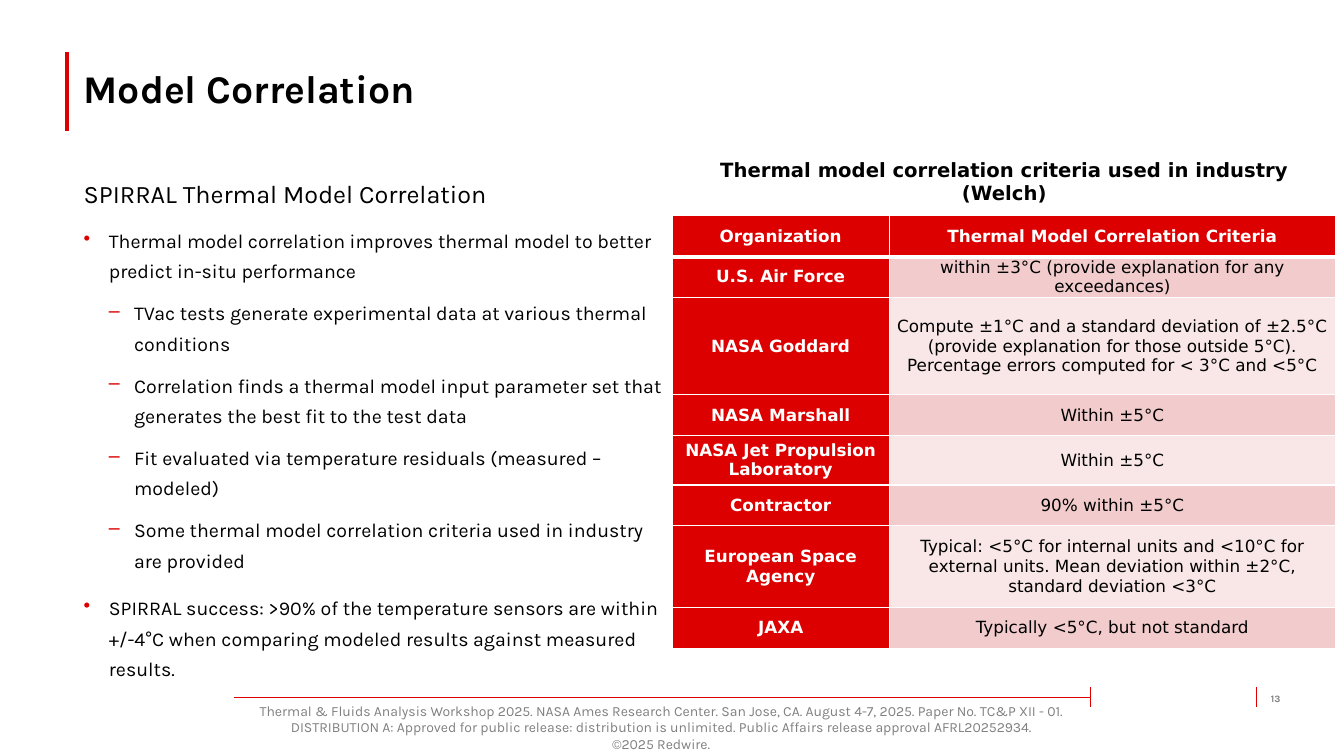
"""Build the Model Correlation slide with its criteria table."""
from dataclasses import dataclass

from lxml.etree import SubElement
from pptx import Presentation
from pptx.dml.color import RGBColor
from pptx.enum.shapes import MSO_CONNECTOR
from pptx.enum.text import MSO_ANCHOR, PP_ALIGN
from pptx.oxml import parse_xml
from pptx.oxml.ns import nsdecls, qn
from pptx.slide import Slide
from pptx.table import _Cell
from pptx.text.text import TextFrame, _Paragraph
from pptx.util import Cm, Pt

RED = RGBColor(0xDC, 0x00, 0x00)
ROSE = RGBColor(0xF2, 0xCC, 0xCC)
PALE_ROSE = RGBColor(0xF9, 0xE7, 0xE7)
WHITE = RGBColor(0xFF, 0xFF, 0xFF)
BLACK = RGBColor(0x00, 0x00, 0x00)
GRAY = RGBColor(0x80, 0x80, 0x80)
BODY_FONT = "Karla"
TABLE_FONT = "DejaVu Sans"


@dataclass(frozen=True)
class Style:
    size: float
    color: RGBColor = BLACK
    bold: bool = False
    font: str = BODY_FONT
    align: PP_ALIGN = PP_ALIGN.LEFT
    spacing: float = 1.0


@dataclass(frozen=True)
class Label:
    text: str
    box: tuple[float, float, float, float]
    style: Style
    anchor: MSO_ANCHOR = MSO_ANCHOR.TOP
    inset: tuple[float, float] = (0, 0)


@dataclass(frozen=True)
class Rule:
    start: tuple[float, float]
    end: tuple[float, float]
    width: float = 0.5


@dataclass(frozen=True)
class Bullet:
    level: int
    text: str


@dataclass(frozen=True)
class Criterion:
    organization: str
    criteria: str
    height: float = 1.03


FOOTER = "\n".join([
    "Thermal & Fluids Analysis Workshop 2025. NASA Ames Research Center. San Jose, CA. "
    "August 4-7, 2025. Paper No. TC&P XII - 01.",
    "DISTRIBUTION A: Approved for public release: distribution is unlimited. "
    "Public Affairs release approval AFRL20252934.",
    "©2025 Redwire.",
])
LABELS = [
    Label(FOOTER, (5.89, 18.01, 21.54, 0.64), Style(10, GRAY, align=PP_ALIGN.CENTER),
          MSO_ANCHOR.MIDDLE),
    Label("Model Correlation", (2.11, 1.3, 30.58, 1.98), Style(28, bold=True, spacing=0.9),
          MSO_ANCHOR.MIDDLE),
    Label("SPIRRAL Thermal Model Correlation", (2.11, 4.34, 30.58, 0.66),
          Style(18, spacing=1.2)),
    Label("13", (32.03, 17.22, 1.24, 0.79), Style(7, GRAY, True), MSO_ANCHOR.MIDDLE),
    Label("Thermal model correlation criteria used in industry (Welch)",
          (16.94, 3.84, 16.74, 1.57),
          Style(14, bold=True, font=TABLE_FONT, align=PP_ALIGN.CENTER), inset=(0.25, 0.13)),
]
RULES = [
    Rule((1.68, 1.3), (1.68, 3.3), 3),
    Rule((5.89, 17.58), (27.48, 17.58)),
    Rule((31.65, 17.32), (31.65, 17.81)),
    Rule((27.48, 17.32), (27.48, 17.81)),
]
BODY_BOX = (2.11, 5.59, 14.81, 10.9)
BULLETS = [
    Bullet(0, "Thermal model correlation improves thermal model to better predict "
              "in-situ performance"),
    Bullet(1, "TVac tests generate experimental data at various thermal conditions"),
    Bullet(1, "Correlation finds a thermal model input parameter set that generates "
              "the best fit to the test data"),
    Bullet(1, "Fit evaluated via temperature residuals (measured – modeled)"),
    Bullet(1, "Some thermal model correlation criteria used in industry are provided"),
    Bullet(0, "SPIRRAL success: >90% of the temperature sensors are within +/-4°C when "
              "comparing modeled results against measured results."),
]
TABLE_ORIGIN = (16.94, 5.44)
COLUMN_WIDTHS = (5.47, 11.25)
CRITERIA = [
    Criterion("Organization", "Thermal Model Correlation Criteria"),
    Criterion("U.S. Air Force", "within ±3°C (provide explanation for any exceedances)"),
    Criterion("NASA Goddard", "Compute ±1°C and a standard deviation of ±2.5°C (provide "
              "explanation for those outside 5°C). Percentage errors computed for "
              "< 3°C and <5°C", 2.45),
    Criterion("NASA Marshall", "Within ±5°C"),
    Criterion("NASA Jet Propulsion Laboratory", "Within ±5°C", 1.24),
    Criterion("Contractor", "90% within ±5°C"),
    Criterion("European Space Agency", "Typical: <5°C for internal units and <10°C for "
              "external units. Mean deviation within ±2°C, standard deviation <3°C", 2.06),
    Criterion("JAXA", "Typically <5°C, but not standard"),
]


def format_text(tf: TextFrame, style: Style) -> None:
    for p in tf.paragraphs:
        p.alignment = style.align
        p.line_spacing = style.spacing
        for r in p.runs:
            r.font.size = Pt(style.size)
            r.font.name = style.font
            r.font.bold = style.bold
            r.font.color.rgb = style.color


def add_label(s: Slide, label: Label) -> TextFrame:
    tf = s.shapes.add_textbox(*map(Cm, label.box)).text_frame
    tf.word_wrap = True
    tf.vertical_anchor = label.anchor
    tf.margin_left = tf.margin_right = Cm(label.inset[0])
    tf.margin_top = tf.margin_bottom = Cm(label.inset[1])
    tf.text = label.text
    format_text(tf, label.style)
    return tf


def add_rule(s: Slide, rule: Rule) -> None:
    sp = s.shapes.add_connector(MSO_CONNECTOR.STRAIGHT, *map(Cm, rule.start + rule.end))
    sp.line.color.rgb = RED
    sp.line.width = Pt(rule.width)
    SubElement(sp._element.spPr, qn("a:effectLst"))


def set_bullet(p: _Paragraph, level: int) -> None:
    p.level = level
    pPr = p._p.get_or_add_pPr()
    pPr.set("marL", str(Cm(0.635 * (level + 1))))
    pPr.set("indent", str(-Cm(0.635)))
    color = SubElement(pPr, qn("a:buClr"))
    SubElement(color, qn("a:srgbClr"), val=str(RED))
    SubElement(pPr, qn("a:buChar"), char="•–"[level])


def add_bullets(s: Slide, bullets: list[Bullet]) -> None:
    text = "\n".join(bullet.text for bullet in bullets)
    tf = add_label(s, Label(text, BODY_BOX, Style(14, spacing=1.3)))
    for i, (p, bullet) in enumerate(zip(tf.paragraphs, bullets)):
        set_bullet(p, bullet.level)
        if i:
            p.space_before = Pt((12, 8)[bullet.level])


def set_borders(cell: _Cell, top: float, bottom: float) -> None:
    tcPr = cell._tc.get_or_add_tcPr()
    for i, (side, width) in enumerate(zip("LRTB", (1, 1, top, bottom))):
        tcPr.insert(i, parse_xml(
            f'<a:ln{side} {nsdecls("a")} w="{Pt(width)}"><a:solidFill>'
            f'<a:srgbClr val="{WHITE}"/></a:solidFill></a:ln{side}>'))


def add_criteria_table(s: Slide, criteria: list[Criterion]) -> None:
    size = (sum(COLUMN_WIDTHS), sum(row.height for row in criteria))
    table = s.shapes.add_table(len(criteria), 2, *map(Cm, TABLE_ORIGIN + size)).table
    table.horz_banding = False
    for column, width in zip(table.columns, COLUMN_WIDTHS):
        column.width = Cm(width)
    for i, row in enumerate(criteria):
        table.rows[i].height = Cm(row.height)
        for j, text in enumerate((row.organization, row.criteria)):
            cell = table.cell(i, j)
            heading = i == 0 or j == 0
            cell.margin_left = cell.margin_right = cell.margin_top = cell.margin_bottom = 0
            cell.vertical_anchor = MSO_ANCHOR.MIDDLE
            cell.fill.solid()
            cell.fill.fore_color.rgb = RED if heading else (PALE_ROSE, ROSE)[i % 2]
            set_borders(cell, 3 if i == 1 else 1, 3 if i == 0 else 1)
            cell.text_frame.text = text
            format_text(cell.text_frame, Style(12, WHITE if heading else BLACK, heading,
                                               TABLE_FONT, PP_ALIGN.CENTER))


def main() -> None:
    prs = Presentation()
    prs.slide_width, prs.slide_height = Cm(33.87), Cm(19.05)
    s = prs.slides.add_slide(prs.slide_layouts[6])
    for rule in RULES:
        add_rule(s, rule)
    for label in LABELS:
        add_label(s, label)
    add_bullets(s, BULLETS)
    add_criteria_table(s, CRITERIA)
    prs.save("out.pptx")


if __name__ == "__main__":
    main()
